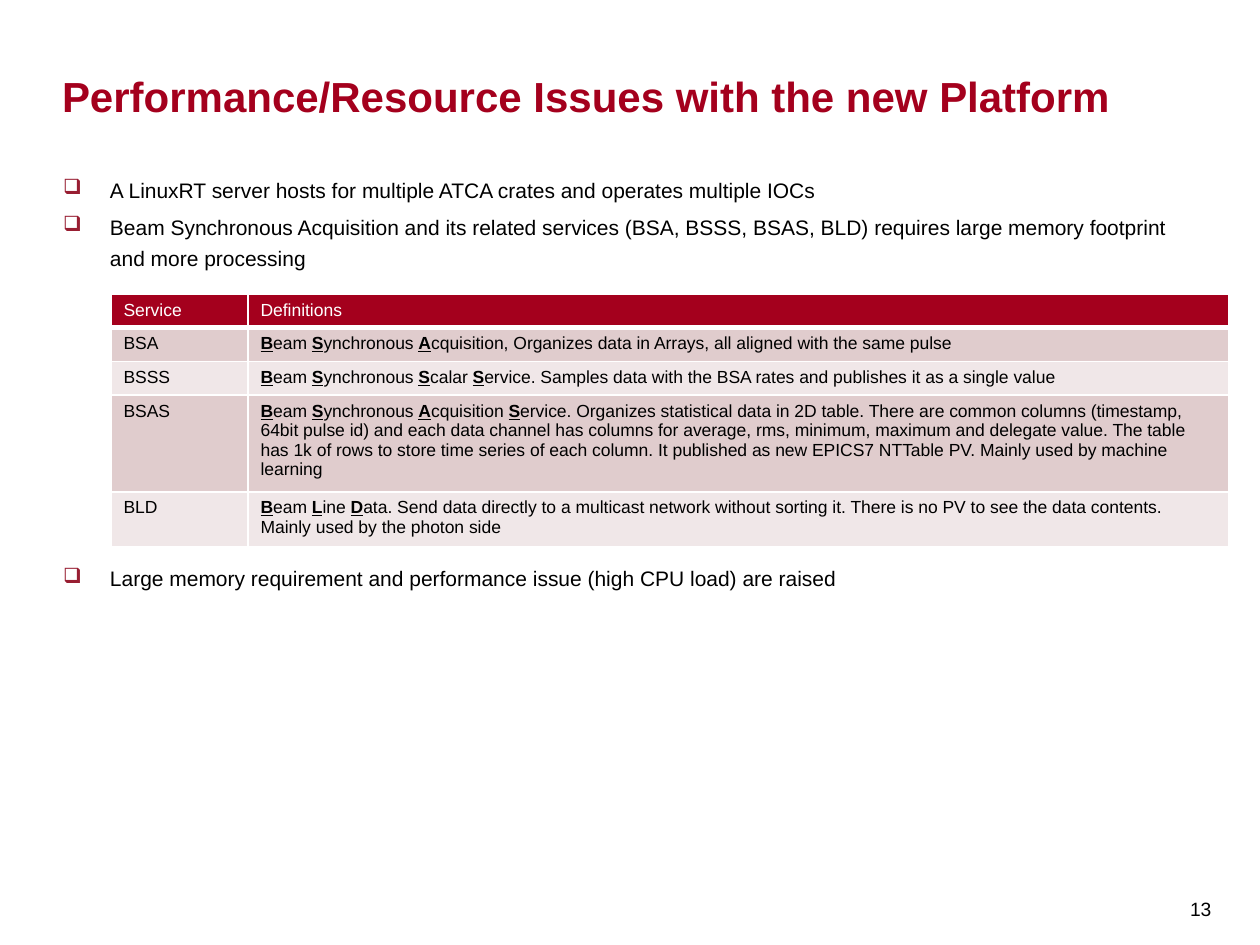
from dataclasses import dataclass

from lxml.etree import SubElement
from pptx import Presentation
from pptx.dml.color import RGBColor
from pptx.enum.text import MSO_ANCHOR as Anchor
from pptx.oxml import parse_xml
from pptx.oxml.ns import nsdecls, qn
from pptx.util import Emu, Pt


@dataclass(frozen=True)
class Theme:
    """Colours and type sizes of the slide."""
    font: str = "Arial"
    crimson: str = "A4001D"
    bullet: str = "981E32"
    black: str = "000000"
    white: str = "FFFFFF"
    bands: tuple = ("E0CCCD", "F0E7E8")
    title_size: int = 24
    body_size: int = 12
    table_size: int = 10
    number_size: int = 11


THEME = Theme()
EMU_PER_PX = 914400 / 126
TITLE = "Performance/Resource Issues with the new Platform"
BULLETS = [
    ("A LinuxRT server hosts for multiple ATCA crates and operates multiple IOCs", 0),
    ("Beam Synchronous Acquisition and its related services (BSA, BSSS, BSAS, BLD) "
     "requires large memory footprint and more processing", 0),
    ("Large memory requirement and performance issue (high CPU load) are raised", 162),
]
SERVICES = [
    ("Service", "Definitions"),
    ("BSA", "*B*eam *S*ynchronous *A*cquisition, Organizes data in Arrays, "
            "all aligned with the same pulse"),
    ("BSSS", "*B*eam *S*ynchronous *S*calar *S*ervice. Samples data with the BSA rates "
             "and publishes it as a single value"),
    ("BSAS", "*B*eam *S*ynchronous *A*cquisition *S*ervice. Organizes statistical data in "
             "2D table. There are common columns (timestamp, 64bit pulse id) and each data "
             "channel has columns for average, rms, minimum, maximum and delegate value. "
             "The table has 1k of rows to store time series of each column. It published as "
             "new EPICS7 NTTable PV. Mainly used by machine learning"),
    ("BLD", "*B*eam *L*ine *D*ata. Send data directly to a multicast network without "
            "sorting it. There is no PV to see the data contents. Mainly used by the "
            "photon side"),
]
COLUMN_WIDTHS = (137, 981)
ROW_HEIGHTS = (32, 32, 32, 91, 51)


def px(length):
    """Turn pixels into EMU."""
    return Emu(round(length * EMU_PER_PX))


def add_run(paragraph, text, size, color, bold=False, underline=False):
    """Add one styled run to a paragraph."""
    run = paragraph.add_run()
    run.text = text
    run.font.name = THEME.font
    run.font.size = Pt(size)
    run.font.bold = bold
    run.font.underline = underline
    run.font.color.rgb = RGBColor.from_string(color)


def add_text_box(slide, left, top, width, height, anchor, insets=(0, 0, 0, 0), wrap=True):
    """Add an empty text box and return its text frame."""
    frame = slide.shapes.add_textbox(px(left), px(top), px(width), px(height)).text_frame
    frame.word_wrap = wrap
    frame.vertical_anchor = anchor
    (frame.margin_left, frame.margin_top,
     frame.margin_right, frame.margin_bottom) = map(px, insets)
    return frame


def set_bullet(paragraph, indent):
    """Give a paragraph a hanging coloured box bullet."""
    properties = paragraph._p.get_or_add_pPr()
    properties.set("marL", str(px(indent)))
    properties.set("indent", str(-px(indent)))
    color = SubElement(properties, qn("a:buClr"))
    SubElement(color, qn("a:srgbClr")).set("val", THEME.bullet)
    SubElement(properties, qn("a:buChar")).set("char", "❑")


def add_bullets(slide):
    """Add the bulleted body, leaving room for the table."""
    frame = add_text_box(slide, 63, 171, 1118, 698, Anchor.TOP)
    for index, (text, space_before) in enumerate(BULLETS):
        paragraph = frame.add_paragraph() if index else frame.paragraphs[0]
        set_bullet(paragraph, 47)
        paragraph.line_spacing = 1.25
        paragraph.space_after = Pt(3)
        if space_before:
            paragraph.space_before = Pt(space_before)
        add_run(paragraph, text, THEME.body_size, THEME.black)


def set_borders(cell, bottom):
    """Draw white cell borders with the given bottom width in points."""
    properties = cell._tc.get_or_add_tcPr()
    widths = {"lnL": 1, "lnR": 1, "lnT": 1, "lnB": bottom}
    for position, (side, width) in enumerate(widths.items()):
        properties.insert(position, parse_xml(
            f'<a:{side} {nsdecls("a")} w="{Pt(width)}"><a:solidFill>'
            f'<a:srgbClr val="{THEME.white}"/></a:solidFill></a:{side}>'))


def fill_cell(cell, text, fill, color, bottom):
    """Fill a cell, with the letters between asterisks bold and underlined."""
    cell.fill.solid()
    cell.fill.fore_color.rgb = RGBColor.from_string(fill)
    set_borders(cell, bottom)
    paragraph = cell.text_frame.paragraphs[0]
    for index, part in enumerate(text.split("*")):
        if part:
            marked = index % 2 == 1
            add_run(paragraph, part, THEME.table_size, color, marked, marked)


def add_service_table(slide):
    """Add the table of services and their definitions."""
    table = slide.shapes.add_table(
        len(SERVICES), len(COLUMN_WIDTHS), px(111), px(294),
        px(sum(COLUMN_WIDTHS)), px(sum(ROW_HEIGHTS))).table
    for column, width in zip(table.columns, COLUMN_WIDTHS):
        column.width = px(width)
    for index, (row, height, texts) in enumerate(zip(table.rows, ROW_HEIGHTS, SERVICES)):
        row.height = px(height)
        if index == 0:
            style = THEME.crimson, THEME.white, 3
        else:
            style = THEME.bands[(index - 1) % 2], THEME.black, 1
        for cell, text in zip(row.cells, texts):
            fill_cell(cell, text, *style)


def main():
    """Build and save the slide."""
    presentation = Presentation()
    presentation.slide_width, presentation.slide_height = px(1260), px(945)
    slide = presentation.slides.add_slide(presentation.slide_layouts[6])
    number = add_text_box(slide, 1180, 871, 44, 74, Anchor.MIDDLE, (10, 8, 10, 6), False)
    add_run(number.paragraphs[0], "13", THEME.number_size, THEME.black)
    title = add_text_box(slide, 62, 18, 1116, 103, Anchor.BOTTOM)
    add_run(title.paragraphs[0], TITLE, THEME.title_size, THEME.crimson, bold=True)
    add_bullets(slide)
    add_service_table(slide)
    presentation.save("out.pptx")


if __name__ == "__main__":
    main()
